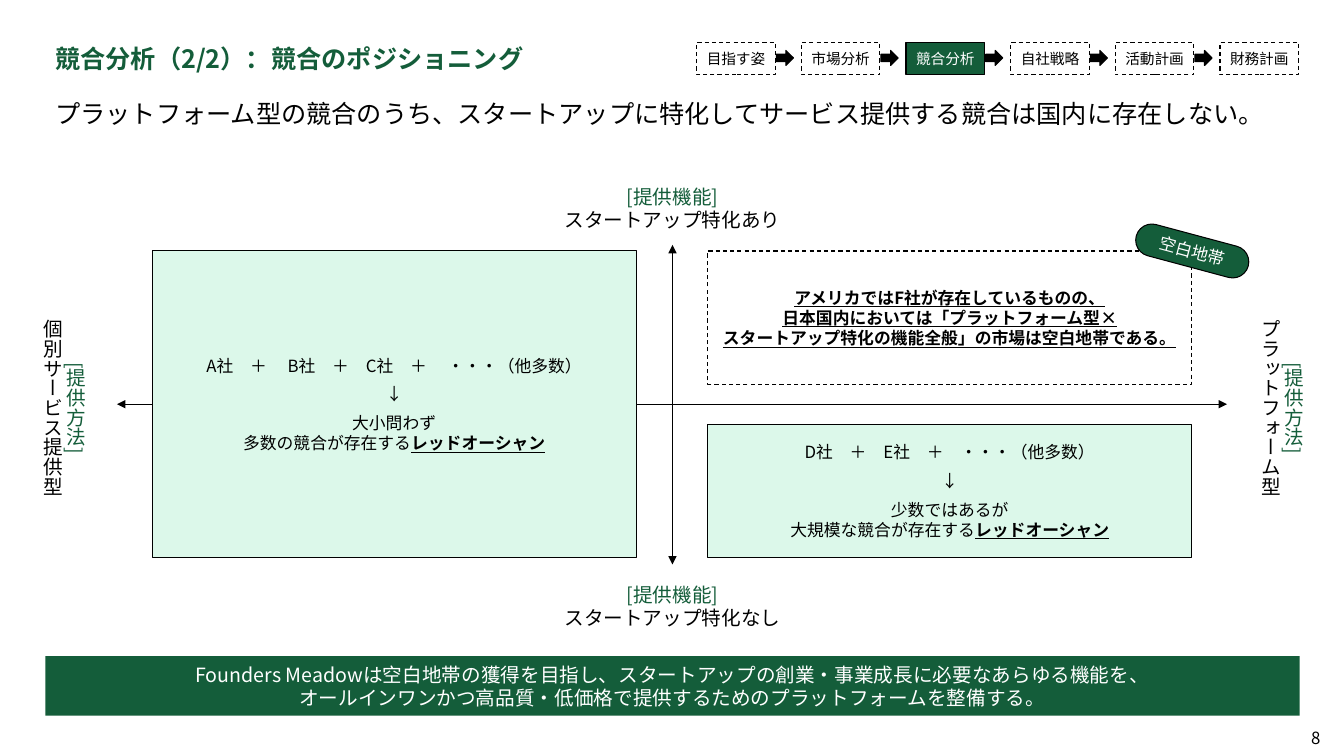
import pptx
import pptx.util
import pptx.dml.color
import pptx.enum.dml
import pptx.enum.shapes
import pptx.enum.text
import pptx.oxml.ns
import lxml.etree

Inches = pptx.util.Inches
Pt = pptx.util.Pt
RGBColor = pptx.dml.color.RGBColor
SHAPE = pptx.enum.shapes.MSO_SHAPE
ALIGN = pptx.enum.text.PP_ALIGN
ANCHOR = pptx.enum.text.MSO_ANCHOR
qn = pptx.oxml.ns.qn

GREEN = RGBColor(0x14, 0x5D, 0x3A)
MINT = RGBColor(0xDC, 0xF8, 0xEA)
BLACK = RGBColor(0, 0, 0)
WHITE = RGBColor(255, 255, 255)
FONT = "Noto Sans CJK JP"
STRONG = {"bold": True, "underline": True}

TITLE = "競合分析（2/2）：競合のポジショニング"
MESSAGE = "プラットフォーム型の競合のうち、スタートアップに特化してサービス提供する競合は国内に存在しない。"
PAGE = "8"
STEPS = ["目指す姿", "市場分析", "競合分析", "自社戦略", "活動計画", "財務計画"]
CURRENT_STEP = "競合分析"
AXIS_LABELS = [
    ("[提供機能]", "スタートアップ特化あり", (5.36, 1.78, 2.62, 0.57), False),
    ("[提供機能]", "スタートアップ特化なし", (5.36, 5.73, 2.62, 0.57), False),
    ("[提供方法]", "個別サービス提供型", (0.46, 3.17, 0.35, 1.98), True),
    ("[提供方法]", "プラットフォーム型", (12.54, 3.17, 0.35, 1.98), True),
]
AXES = [(1.16, 4.01, 12.17, 4.01), (6.67, 5.6, 6.67, 2.43)]
QUADRANTS = [
    ((1.51, 2.49, 4.8, 3.04), MINT, False, [
        "A社　＋　 B社　＋　C社　＋ 　・・・（他多数）",
        "↓",
        [("大小問わず\n多数の競合が存在する", {}), ("レッドオーシャン", STRONG)],
    ]),
    ((7.02, 2.49, 4.8, 1.32), WHITE, True, [
        [("アメリカではF社が存在しているものの、\n"
          "日本国内においては「プラットフォーム型×\n"
          "スタートアップ特化の機能全般」の市場は空白地帯である。", STRONG)],
    ]),
    ((7.02, 4.21, 4.8, 1.32), MINT, False, [
        "D社　＋　E社　＋　・・・（他多数）",
        "↓",
        [("少数ではあるが\n大規模な競合が存在する", {}), ("レッドオーシャン", STRONG)],
    ]),
]
CONCLUSION = [
    "Founders Meadowは空白地帯の獲得を目指し、スタートアップの創業・事業成長に必要なあらゆる機能を、",
    "オールインワンかつ高品質・低価格で提供するためのプラットフォームを整備する。",
]
BADGE = "空白地帯"

deck = pptx.Presentation()
deck.slide_width, deck.slide_height = Inches(13.33), Inches(7.5)
slide = deck.slides.add_slide(deck.slide_layouts[6])


def write(text, holder, size=12, color=BLACK, bold=False, align=ALIGN.CENTER,
          anchor=ANCHOR.MIDDLE, wrap=True, gap=0, inset=(0, 0), vertical=False):
    frame = holder.text_frame
    frame.word_wrap = wrap
    frame.vertical_anchor = anchor
    frame.margin_left = frame.margin_right = Inches(inset[0])
    frame.margin_top = frame.margin_bottom = Inches(inset[1])
    if vertical:
        frame._txBody.bodyPr.set("vert", "eaVert")
    for index, pieces in enumerate([text] if isinstance(text, str) else text):
        paragraph = frame.add_paragraph() if index else frame.paragraphs[0]
        paragraph.alignment = align
        paragraph.line_spacing = Pt(size * 1.2)
        if index:
            paragraph.space_before = Pt(gap)
        for words, style in [(pieces, {})] if isinstance(pieces, str) else pieces:
            for number, line in enumerate(words.split("\n")):
                if number:
                    paragraph.add_line_break()
                run = paragraph.add_run()
                run.text = line
                run.font.name = FONT
                run.font.size = Pt(size)
                run.font.bold = style.get("bold", bold)
                run.font.underline = style.get("underline", False)
                run.font.color.rgb = style.get("color", color)
                east_asian = lxml.etree.SubElement(run._r.get_or_add_rPr(), qn("a:ea"))
                east_asian.set("typeface", FONT)


def text_box(place):
    return slide.shapes.add_textbox(*map(Inches, place))


def block(kind, place, fill=None, outline=True, dashed=False):
    shape = slide.shapes.add_shape(kind, *map(Inches, place))
    shape.shadow.inherit = False
    if fill is None:
        shape.fill.background()
    else:
        shape.fill.solid()
        shape.fill.fore_color.rgb = fill
    if outline:
        shape.line.color.rgb = BLACK
        shape.line.width = Pt(0.75)
        if dashed:
            shape.line.dash_style = pptx.enum.dml.MSO_LINE.DASH
    else:
        shape.line.fill.background()
    return shape


def axis(ends):
    line = slide.shapes.add_connector(pptx.enum.shapes.MSO_CONNECTOR.STRAIGHT, *map(Inches, ends))
    line.line.color.rgb = BLACK
    line.line.width = Pt(0.75)
    for end in ("a:headEnd", "a:tailEnd"):
        lxml.etree.SubElement(line.line._get_or_add_ln(), qn(end)).set("type", "triangle")
    lxml.etree.SubElement(line._element.spPr, qn("a:effectLst"))


def main():
    write(TITLE, text_box((0.45, 0.32, 6.3, 0.51)), size=18, color=GREEN, bold=True,
          align=ALIGN.LEFT, inset=(0.1, 0.05))
    write(PAGE, text_box((12.9, 7.2, 0.3, 0.24)), wrap=False)

    first_step, step_pitch = 6.91, 1.038
    for index, step in enumerate(STEPS):
        left = first_step + index * step_pitch
        current = step == CURRENT_STEP
        box = block(SHAPE.RECTANGLE, (left, 0.42, 0.78, 0.32),
                    fill=GREEN if current else None, dashed=not current)
        write(step, box, size=10.5, color=WHITE if current else BLACK)
        if index < len(STEPS) - 1:
            block(SHAPE.RIGHT_ARROW, (left + 0.79, 0.5, 0.17, 0.15), fill=BLACK)

    write(MESSAGE, text_box((0.45, 0.93, 12.43, 0.51)), size=18, align=ALIGN.LEFT,
          anchor=ANCHOR.TOP, inset=(0.1, 0.05))

    for ends in AXES:
        axis(ends)
    for heading, meaning, place, vertical in AXIS_LABELS:
        write([[(heading, {"color": GREEN})], meaning], text_box(place), size=14,
              vertical=vertical)
    for place, fill, dashed, text in QUADRANTS:
        write(text, block(SHAPE.RECTANGLE, place, fill=fill, dashed=dashed), gap=6)

    band = block(SHAPE.RECTANGLE, (0.45, 6.51, 12.44, 0.59), fill=GREEN, outline=False)
    write(CONCLUSION, band, size=14, color=WHITE)

    badge = block(SHAPE.ROUNDED_RECTANGLE, (11.25, 2.33, 1.15, 0.32), fill=GREEN)
    badge.adjustments[0] = 0.5
    badge.rotation = 15
    write(BADGE, badge, color=WHITE)

    deck.save("out.pptx")


if __name__ == "__main__":
    main()
